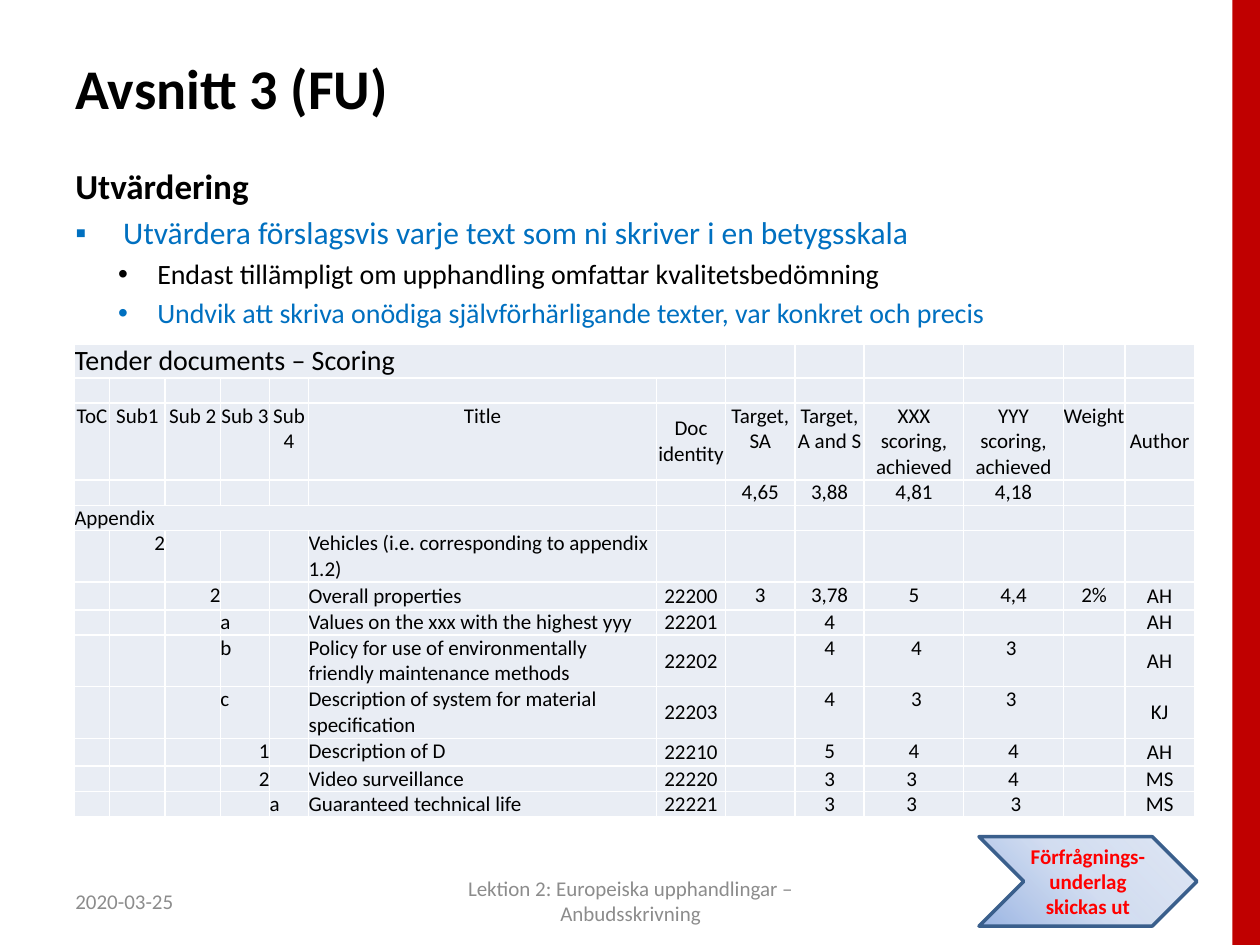
from lxml import etree
from pptx import Presentation
from pptx.dml.color import RGBColor
from pptx.enum.shapes import MSO_SHAPE
from pptx.enum.text import MSO_ANCHOR, PP_ALIGN
from pptx.oxml import parse_xml
from pptx.oxml.ns import nsdecls, qn
from pptx.util import Inches, Pt

LEFT, CENTER, RIGHT = PP_ALIGN.LEFT, PP_ALIGN.CENTER, PP_ALIGN.RIGHT
TOP, MIDDLE = MSO_ANCHOR.TOP, MSO_ANCHOR.MIDDLE
RECT, CHEVRON = MSO_SHAPE.RECTANGLE, MSO_SHAPE.CHEVRON

BLACK = RGBColor(0x00, 0x00, 0x00)
BLUE = RGBColor(0x00, 0x70, 0xC0)
GRAY = RGBColor(0x8C, 0x8C, 0x8C)
RED = RGBColor(0xFF, 0x00, 0x00)
DARK_RED = RGBColor(0xC0, 0x00, 0x00)
CELL_FILL = RGBColor(0xE9, 0xED, 0xF4)
CHEVRON_LINE = RGBColor(0x3A, 0x5F, 0x8C)

# Grid of 100 columns by 75 rows
W, H = Inches(10), Inches(7.5)
COL, ROW = W / 100, H / 75
FONT = "Calibri"
NBSP = chr(160)

# Text, size, bold, colour, left margin and hanging indent in columns, bullet
BODY = [
    ("Utvärdering", 20, True, BLACK, 0, 0, None),
    ("Utvärdera förslagsvis varje text som ni skriver i en betygsskala",
     18, False, BLUE, 3.8, 3.8, "▪"),
    ("Endast tillämpligt om upphandling omfattar kvalitetsbedömning",
     16, False, BLACK, 6.5, 3.1, "•"),
    ("Undvik att skriva onödiga självförhärligande texter, var konkret och precis",
     16, False, BLUE, 6.5, 3.1, "•"),
]

# Cells are divided by "|"; "~" is a non-breaking space
COL_WIDTHS = [2.8, 4.4, 4.4, 3.9, 3.1, 27.6, 5.5, 5.5, 5.5, 7.9, 7.9, 4.9, 5.5]
ROW_HEIGHTS = [2.7, 2, 6.1, 2, 2, 4.1, 2.2, 2, 4.1, 4.1, 2.2, 2, 2]
SCORING = """\
Tender documents – Scoring||||||||||||
||||||||||||
ToC|Sub1|Sub 2|Sub 3|Sub 4|Title|Doc identity|Target, SA|Target, A and S|\
XXX scoring, achieved|YYY scoring, achieved|Weight|Author
|||||||4,65|3,88|4,81|4,18||
Appendix||||||||||||
|2||||Vehicles (i.e. corresponding to appendix 1.2)|||||||
||2|||Overall properties|22200|3|3,78|5|4,4|2%|AH
|||a||Values on the xxx with the highest yyy|22201||4||||AH
|||b||Policy for use of environmentally friendly maintenance methods|22202||4|~4|3~||AH
|||c||Description of system for material specification|22203||4|~3|3~||KJ
|||1||Description of D|22210||5|4|4||AH
|||2||Video surveillance|22220||3|3~|4||MS
||||a|Guaranteed technical life|22221||3|3~|~3||MS"""
MERGED = {0: 6, 4: 5}  # row: last column of its heading
HEADER_ROW, TITLE_COL, DOC_COL, AUTHOR_COL = 2, 5, 6, 12


def place(x, y, w, h):
    return [round(v) for v in (x * COL, y * ROW, w * COL, h * ROW)]


def write(p, text, size, color=BLACK, bold=False, align=LEFT):
    p.alignment = align
    r = p.add_run()
    r.text = text
    for name, value in {"name": FONT, "size": Pt(size), "bold": bold}.items():
        setattr(r.font, name, value)
    r.font.color.rgb = color


def text_frame(s, box, anchor):
    tf = s.shapes.add_textbox(*place(*box)).text_frame
    tf.word_wrap = True
    tf.vertical_anchor = anchor
    return tf


def add_line(s, box, text, size, **fmt):
    write(text_frame(s, box, MIDDLE).paragraphs[0], text, size, **fmt)


def add_side_bar(s, box):
    sp = s.shapes.add_shape(RECT, *place(*box))
    sp.shadow.inherit = False
    sp.fill.solid()
    sp.fill.fore_color.rgb = DARK_RED
    sp.line.fill.background()


def add_body(s, box):
    tf = text_frame(s, box, TOP)
    for i, (text, size, bold, color, margin, hang, bullet) in enumerate(BODY):
        p = tf.add_paragraph() if i else tf.paragraphs[0]
        if bullet:
            pPr = p._p.get_or_add_pPr()
            pPr.set("marL", str(round(margin * COL)))
            pPr.set("indent", str(round(-hang * COL)))
            etree.SubElement(pPr, qn("a:buFont"), typeface="Arial")
            etree.SubElement(pPr, qn("a:buChar"), char=bullet)
        if i:
            p.space_before = Pt(size * 0.2)
        write(p, text, size, color, bold)


def cell_align(row, col, text):
    if row == HEADER_ROW or col > TITLE_COL:
        return CENTER
    return RIGHT if text.isdigit() else LEFT


def style_cell(cell):
    for side in ("left", "right", "top", "bottom"):
        setattr(cell, f"margin_{side}", 0)
    tcPr = cell._tc.get_or_add_tcPr()
    for edge in "LRTB":
        tcPr.append(parse_xml(
            f'<a:ln{edge} w="12700" {nsdecls("a")}><a:solidFill>'
            f'<a:srgbClr val="FFFFFF"/></a:solidFill></a:ln{edge}>'))
    cell.fill.solid()
    cell.fill.fore_color.rgb = CELL_FILL


def add_scoring_table(s, x, y):
    rows = [line.split("|") for line in SCORING.replace("~", NBSP).split("\n")]
    box = place(x, y, sum(COL_WIDTHS), sum(ROW_HEIGHTS))
    table = s.shapes.add_table(len(rows), len(COL_WIDTHS), *box).table
    table.first_row = table.horz_banding = False
    for column, width in zip(table.columns, COL_WIDTHS):
        column.width = round(width * COL)
    for row, height in zip(table.rows, ROW_HEIGHTS):
        row.height = round(height * ROW)
    for i, texts in enumerate(rows):
        for j, text in enumerate(texts):
            cell = table.cell(i, j)
            style_cell(cell)
            if j in (DOC_COL, AUTHOR_COL) or (j == TITLE_COL and i in (5, 6)):
                cell.vertical_anchor = MIDDLE
            p = cell.text_frame.paragraphs[0]
            if text:
                write(p, text, 12 if i else 16, align=cell_align(i, j, text))
            else:  # keeps empty rows at the height of the small text
                etree.SubElement(p._p, qn("a:endParaRPr"), sz="1200")
    for i, last in MERGED.items():
        table.cell(i, 0).merge(table.cell(i, last))


def add_chevron(s, box):
    sp = s.shapes.add_shape(CHEVRON, *place(*box))
    sp.shadow.inherit = False
    sp.line.color.rgb = CHEVRON_LINE
    sp.line.width = Pt(2)
    # Radial gradient from the lower left corner
    sp._element.spPr.find(qn("a:prstGeom")).addnext(parse_xml(
        f'<a:gradFill {nsdecls("a")}><a:gsLst>'
        '<a:gs pos="0"><a:srgbClr val="9AB5E4"/></a:gs>'
        '<a:gs pos="48000"><a:srgbClr val="CBD8EF"><a:alpha val="85000"/></a:srgbClr></a:gs>'
        '<a:gs pos="100000"><a:srgbClr val="E1E8F5"/></a:gs></a:gsLst>'
        '<a:path path="circle"><a:fillToRect t="100000" r="100000"/></a:path></a:gradFill>'))
    tf = sp.text_frame
    for name, value in {"margin_left": 0.04, "margin_right": 0.04,
                        "margin_top": 0.05, "margin_bottom": 0.05}.items():
        setattr(tf, name, Inches(value))
    tf.word_wrap = True
    tf.vertical_anchor = MIDDLE
    write(tf.paragraphs[0], "Förfrågnings-underlag skickas ut", 12, RED, True, CENTER)


def main():
    prs = Presentation()
    prs.slide_width, prs.slide_height = W, H
    s = prs.slides.add_slide(prs.slide_layouts[6])
    add_side_bar(s, (97.8, 0, 2.2, 75))
    add_line(s, (5, 3, 90, 7.9), "Avsnitt 3 (FU)", 32, bold=True)
    add_body(s, (5, 12.6, 90, 14.5))
    # Footer
    add_line(s, (5, 69.5, 23.3, 4), "2020-03-25", 12, color=GRAY)
    add_line(s, (34.2, 69.5, 31.7, 4),
             "Lektion 2: Europeiska upphandlingar – Anbudsskrivning",
             12, color=GRAY, align=CENTER)
    add_scoring_table(s, 5.9, 27.3)
    add_chevron(s, (77.7, 66.4, 17.3, 7.1))
    prs.save("out.pptx")


if __name__ == "__main__":
    main()
